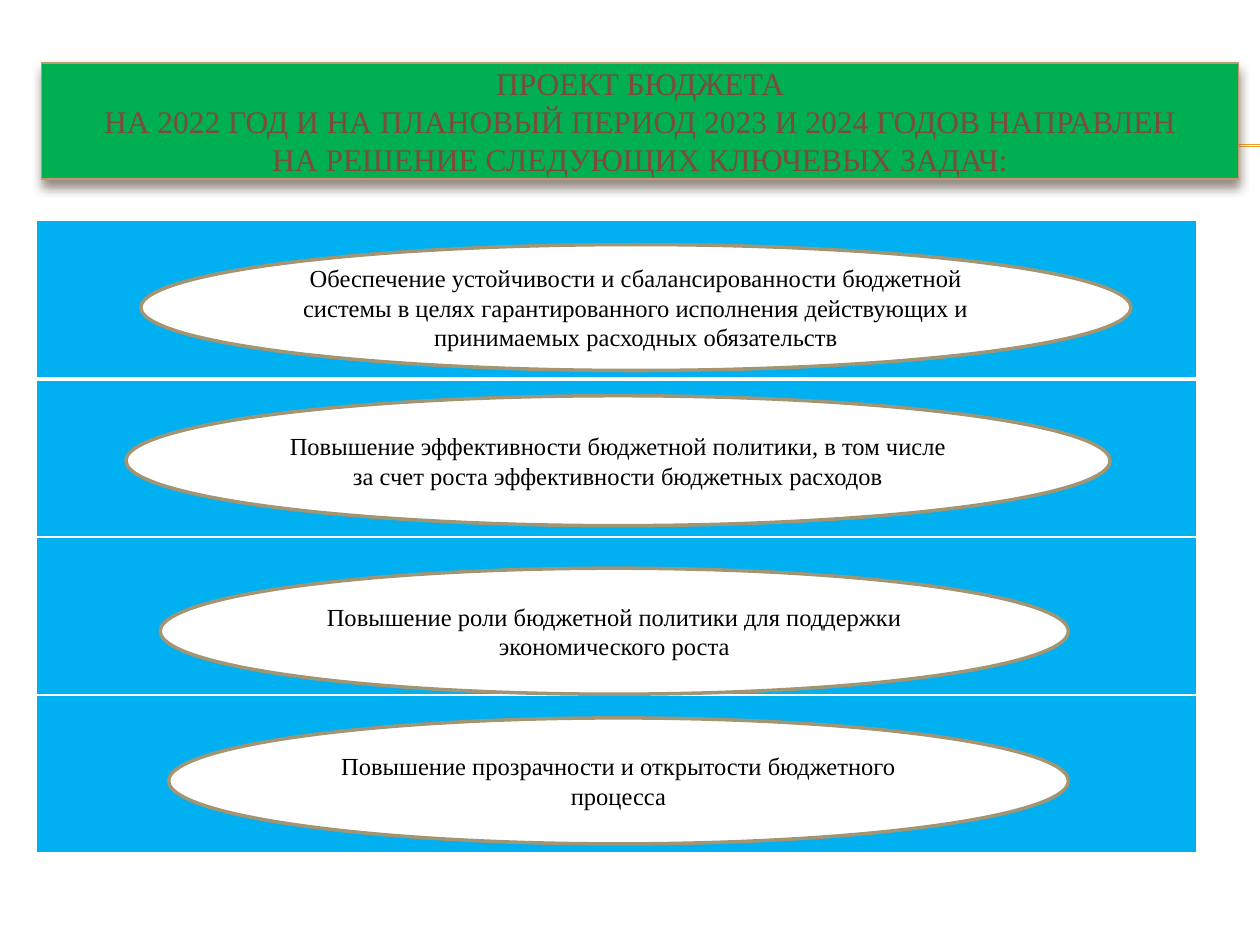
import pptx
import pptx.dml.color
import pptx.enum.shapes
import pptx.enum.text
import pptx.oxml.ns
import pptx.util
from lxml import etree
from pptx.util import Cm

RGBColor = pptx.dml.color.RGBColor
WHITE = RGBColor(0xFF, 0xFF, 0xFF)
BLACK = RGBColor(0x00, 0x00, 0x00)
GREEN = RGBColor(0x00, 0xB0, 0x50)
BLUE = RGBColor(0x00, 0xB0, 0xF0)
ORANGE = RGBColor(0xF0, 0xA2, 0x2E)
TAN = RGBColor(0xC3, 0x98, 0x6D)
KHAKI = RGBColor(0xA1, 0x95, 0x74)
BROWN = RGBColor(0x7C, 0x4B, 0x3B)
SHADOW = RGBColor(0x4E, 0x3B, 0x30)

TITLE = (
    "ПРОЕКТ БЮДЖЕТА\v"
    "НА 2022 ГОД И НА ПЛАНОВЫЙ ПЕРИОД 2023 И 2024 ГОДОВ НАПРАВЛЕН\v"
    "НА РЕШЕНИЕ СЛЕДУЮЩИХ КЛЮЧЕВЫХ ЗАДАЧ:"
)
TASKS = [
    ("Обеспечение устойчивости и сбалансированности бюджетной системы в целях "
     "гарантированного исполнения действующих и принимаемых расходных обязательств",
     (2.1, 0.48, 19.96, 2.54)),
    ("Повышение эффективности бюджетной политики, в том числе за счет роста "
     "эффективности бюджетных расходов",
     (1.8, 0.34, 19.84, 2.62)),
    ("Повышение роли бюджетной политики для поддержки экономического роста",
     (2.49, 0.63, 18.31, 2.54)),
    ("Повышение прозрачности и открытости бюджетного процесса",
     (2.66, 0.46, 18.14, 2.54)),
]


def add_child(parent, tag, **attributes):
    """Append a DrawingML element to the parent and return it."""
    return etree.SubElement(parent, pptx.oxml.ns.qn(tag), attributes)


def format_shape(shape, fill, line, width):
    """Give a shape a solid fill, an outline and no shadow."""
    shape.fill.solid()
    shape.fill.fore_color.rgb = fill
    shape.line.color.rgb = line
    shape.line.width = pptx.util.Pt(width)
    shape.shadow.inherit = False


def write_text(shape, text, size, color):
    """Write centred text into a shape."""
    frame = shape.text_frame
    frame.text = text
    frame_format = {
        "word_wrap": True,
        "auto_size": pptx.enum.text.MSO_AUTO_SIZE.NONE,
        "vertical_anchor": pptx.enum.text.MSO_ANCHOR.MIDDLE,
    }
    for name, value in frame_format.items():
        setattr(frame, name, value)
    paragraph = frame.paragraphs[0]
    paragraph.alignment = pptx.enum.text.PP_ALIGN.CENTER
    font_format = {"name": "Times New Roman", "size": pptx.util.Pt(size), "bold": False}
    for run in paragraph.runs:
        for name, value in font_format.items():
            setattr(run.font, name, value)
        run.font.color.rgb = color


def add_rules(slide, left, top, width):
    """Draw the thin double rule that runs to the slide edge."""
    for offset in (0, 0.03):
        height = Cm(top + offset)
        rule = slide.shapes.add_connector(
            pptx.enum.shapes.MSO_CONNECTOR.STRAIGHT, Cm(left), height, Cm(left + width), height)
        rule.line.color.rgb = ORANGE
        rule.line.width = pptx.util.Pt(0.75)
        add_child(rule.element.spPr, "a:effectLst")


def add_title(slide, left, top, width, height):
    """Place the green title banner with its shadow above the rules."""
    title = slide.shapes.title
    box = {"left": left, "top": top, "width": width, "height": height}
    for name, value in box.items():
        setattr(title, name, Cm(value))
    format_shape(title, GREEN, TAN, 0.79)
    write_text(title, TITLE, 18, BROWN)
    effects = title.element.spPr.find(pptx.oxml.ns.qn("a:effectLst"))
    shadow = add_child(effects, "a:outerShdw", blurRad=str(pptx.util.Pt(6)),
                       dist=str(pptx.util.Pt(4)), dir="5400000", rotWithShape="0")
    color = add_child(shadow, "a:srgbClr", val=str(SHADOW))
    add_child(color, "a:alpha", val="60000")
    slide.shapes.element.append(title.element)


def format_cell(cell, bottom_width):
    """Give a table cell white borders and a blue fill."""
    properties = cell._tc.get_or_add_tcPr()
    for side, width in {"L": 1, "R": 1, "T": 1, "B": bottom_width}.items():
        border = add_child(properties, f"a:ln{side}", w=str(pptx.util.Pt(width)))
        add_child(add_child(border, "a:solidFill"), "a:srgbClr", val=str(WHITE))
    cell.fill.solid()
    cell.fill.fore_color.rgb = BLUE


def add_tasks(slide, left, top, width, height):
    """Place the blue table and one task ellipse over each of its rows."""
    table = slide.shapes.add_table(
        len(TASKS), 1, Cm(left), Cm(top), Cm(width), Cm(height)).table
    table.first_row = False
    table.horz_banding = False
    row_height = height / len(TASKS)
    for index, (text, (inset, drop, ellipse_width, ellipse_height)) in enumerate(TASKS):
        format_cell(table.cell(index, 0), 3 if index == 0 else 1)
        ellipse = slide.shapes.add_shape(
            pptx.enum.shapes.MSO_SHAPE.OVAL, Cm(left + inset),
            Cm(top + index * row_height + drop), Cm(ellipse_width), Cm(ellipse_height))
        format_shape(ellipse, WHITE, KHAKI, 2)
        write_text(ellipse, text, 14, BLACK)


def main():
    """Build the slide and save the presentation."""
    presentation = pptx.Presentation()
    presentation.slide_width = Cm(25.4)
    presentation.slide_height = Cm(19.05)
    slide = presentation.slides.add_slide(presentation.slide_layouts[5])
    add_rules(slide, 1.42, 2.92, 23.98)
    add_title(slide, 0.84, 1.27, 24.13, 2.34)
    add_tasks(slide, 0.74, 4.45, 23.39, 12.75)
    presentation.save("out.pptx")


if __name__ == "__main__":
    main()
